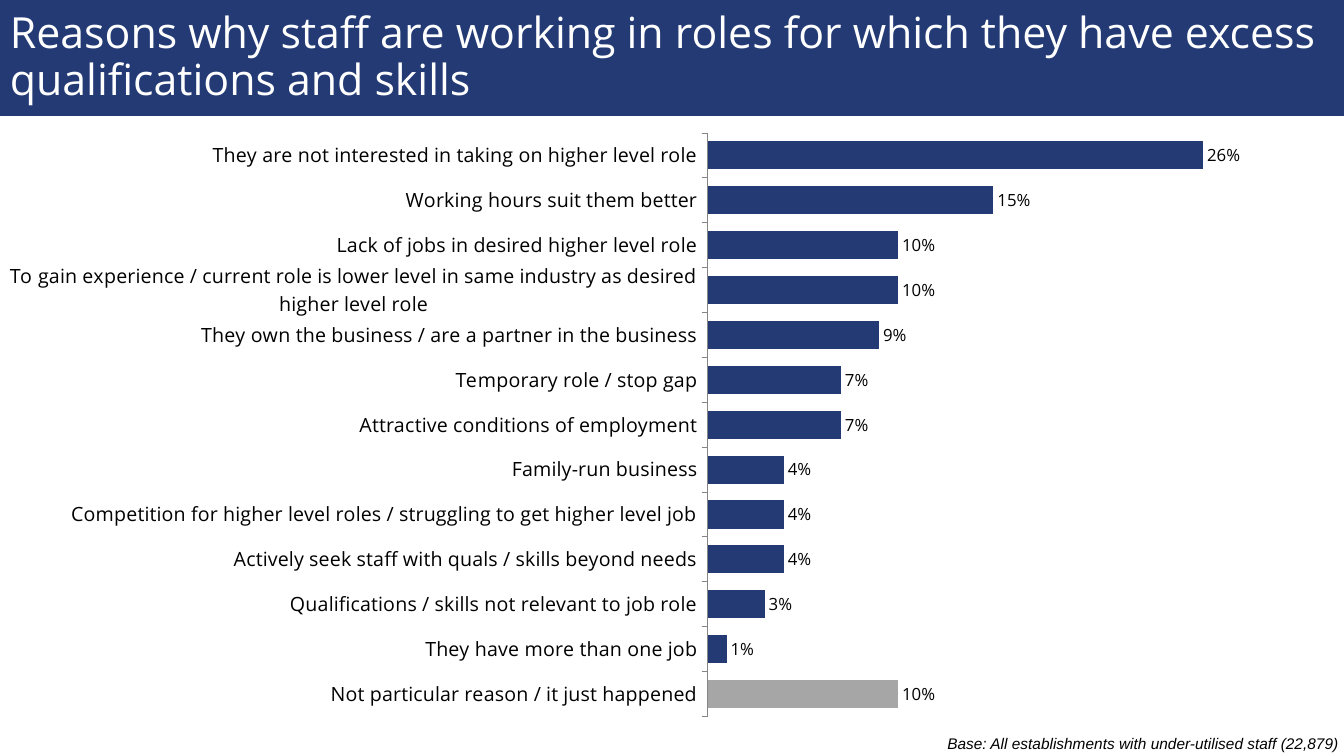
from lxml import etree
from pptx import Presentation
from pptx.chart.data import CategoryChartData
from pptx.dml.color import RGBColor
from pptx.enum.chart import XL_CHART_TYPE, XL_LABEL_POSITION, XL_TICK_MARK
from pptx.enum.shapes import MSO_SHAPE
from pptx.enum.text import MSO_ANCHOR, PP_ALIGN
from pptx.oxml.ns import qn
from pptx.util import Inches, Pt

BAR_CLUSTERED = XL_CHART_TYPE.BAR_CLUSTERED
OUTSIDE_END = XL_LABEL_POSITION.OUTSIDE_END
TICK_OUT = XL_TICK_MARK.OUTSIDE
RECTANGLE = MSO_SHAPE.RECTANGLE
MIDDLE = MSO_ANCHOR.MIDDLE
LEFT, RIGHT = PP_ALIGN.LEFT, PP_ALIGN.RIGHT

NAVY = RGBColor(0x23, 0x3A, 0x75)
GREY = RGBColor(0xA6, 0xA6, 0xA6)
AXIS_GREY = RGBColor(0x86, 0x86, 0x86)
BLACK = RGBColor(0, 0, 0)
WHITE = RGBColor(0xFF, 0xFF, 0xFF)
HEADING_FONT = "Open Sans"
NOTE_FONT = "Arial"

NO_REASON = "Not particular reason / it just happened"
REASONS = [
    (NO_REASON, 0.10),
    ("They have more than one job", 0.01),
    ("Qualifications / skills not relevant to job role", 0.03),
    ("Actively seek staff with quals / skills beyond needs", 0.04),
    ("Competition for higher level roles / struggling to get higher level job", 0.04),
    ("Family-run business", 0.04),
    ("Attractive conditions of employment", 0.07),
    ("Temporary role / stop gap", 0.07),
    ("They own the business / are a partner in the business", 0.09),
    ("To gain experience / current role is lower level in same industry "
     "as desired higher level role", 0.10),
    ("Lack of jobs in desired higher level role", 0.10),
    ("Working hours suit them better", 0.15),
    ("They are not interested in taking on higher level role", 0.26),
]


def set_font(font, size, color, name):
    font.size = Pt(size)
    font.color.rgb = color
    font.name = name


def write_text(sp, text, size, color, name, align=LEFT, italic=False, spacing=1.0):
    tf = sp.text_frame
    tf.word_wrap = True
    tf.vertical_anchor = MIDDLE
    p = tf.paragraphs[0]
    p.alignment = align
    p.line_spacing = spacing
    r = p.add_run()
    r.text = text
    r.font.italic = italic
    set_font(r.font, size, color, name)


def add_title_band(s, left, top, width, height):
    sp = s.shapes.add_shape(RECTANGLE, left, top, width, height)
    sp.shadow.inherit = False
    sp.fill.solid()
    sp.fill.fore_color.rgb = NAVY
    sp.line.fill.background()
    write_text(sp, "Reasons why staff are working in roles for which they have "
               "excess qualifications and skills", 30.6, WHITE, HEADING_FONT,
               spacing=0.9)


def add_base_note(s, left, top, width, height):
    sp = s.shapes.add_textbox(left, top, width, height)
    write_text(sp, "Base: All establishments with under-utilised staff (22,879)",
               11, BLACK, NOTE_FONT, align=RIGHT, italic=True)


def set_plot_layout(chart, x, y, w, h):
    """Fix the inner plot area, as fractions of the chart."""
    plot_area = chart.plots[0]._element.getparent()
    for old in plot_area.findall(qn("c:layout")):
        plot_area.remove(old)
    layout = etree.Element(qn("c:layout"))
    manual = etree.SubElement(layout, qn("c:manualLayout"))
    settings = [("layoutTarget", "inner"), ("xMode", "edge"), ("yMode", "edge"),
                ("x", x), ("y", y), ("w", w), ("h", h)]
    for tag, value in settings:
        etree.SubElement(manual, qn(f"c:{tag}")).set("val", str(value))
    plot_area.insert(0, layout)


def add_reasons_chart(s, left, top, width, height):
    names, shares = zip(*REASONS)
    data = CategoryChartData(number_format="0%")
    data.categories = names
    data.add_series("Series 1", shares)
    chart = s.shapes.add_chart(BAR_CLUSTERED, left, top, width, height, data).chart
    chart.has_legend = False
    chart.has_title = False
    set_font(chart.font, 12, BLACK, HEADING_FONT)
    set_plot_layout(chart, 0.56, 0.02, 0.44, 0.96)

    reason_axis = chart.category_axis
    reason_axis.major_tick_mark = TICK_OUT
    reason_axis.format.line.color.rgb = AXIS_GREY
    reason_axis.format.line.width = Pt(0.75)
    set_font(reason_axis.tick_labels.font, 14, BLACK, HEADING_FONT)
    share_axis = chart.value_axis
    share_axis.minimum_scale, share_axis.maximum_scale = 0, 0.3
    share_axis.has_major_gridlines = False
    share_axis.visible = False

    plot = chart.plots[0]
    plot.gap_width = 60
    plot.vary_by_categories = False
    bars = plot.series[0]
    no_reason_bar = bars.points[names.index(NO_REASON)]
    for bar, color in ((bars, NAVY), (no_reason_bar, GREY)):
        bar.format.fill.solid()
        bar.format.fill.fore_color.rgb = color
    labels = bars.data_labels
    labels.show_value = True
    labels.number_format = "0%"
    labels.number_format_is_linked = False
    labels.position = OUTSIDE_END
    set_font(labels.font, 12, BLACK, HEADING_FONT)


def main():
    prs = Presentation()
    prs.slide_width, prs.slide_height = Inches(13.33), Inches(7.5)
    s = prs.slides.add_slide(prs.slide_layouts[6])
    add_title_band(s, 0, 0, prs.slide_width, Inches(1.15))
    add_base_note(s, Inches(5.72), Inches(7.23), Inches(7.66), Inches(0.29))
    add_reasons_chart(s, Inches(-0.2), Inches(1.2), Inches(12.89), Inches(6.03))
    prs.save("out.pptx")


if __name__ == "__main__":
    main()
